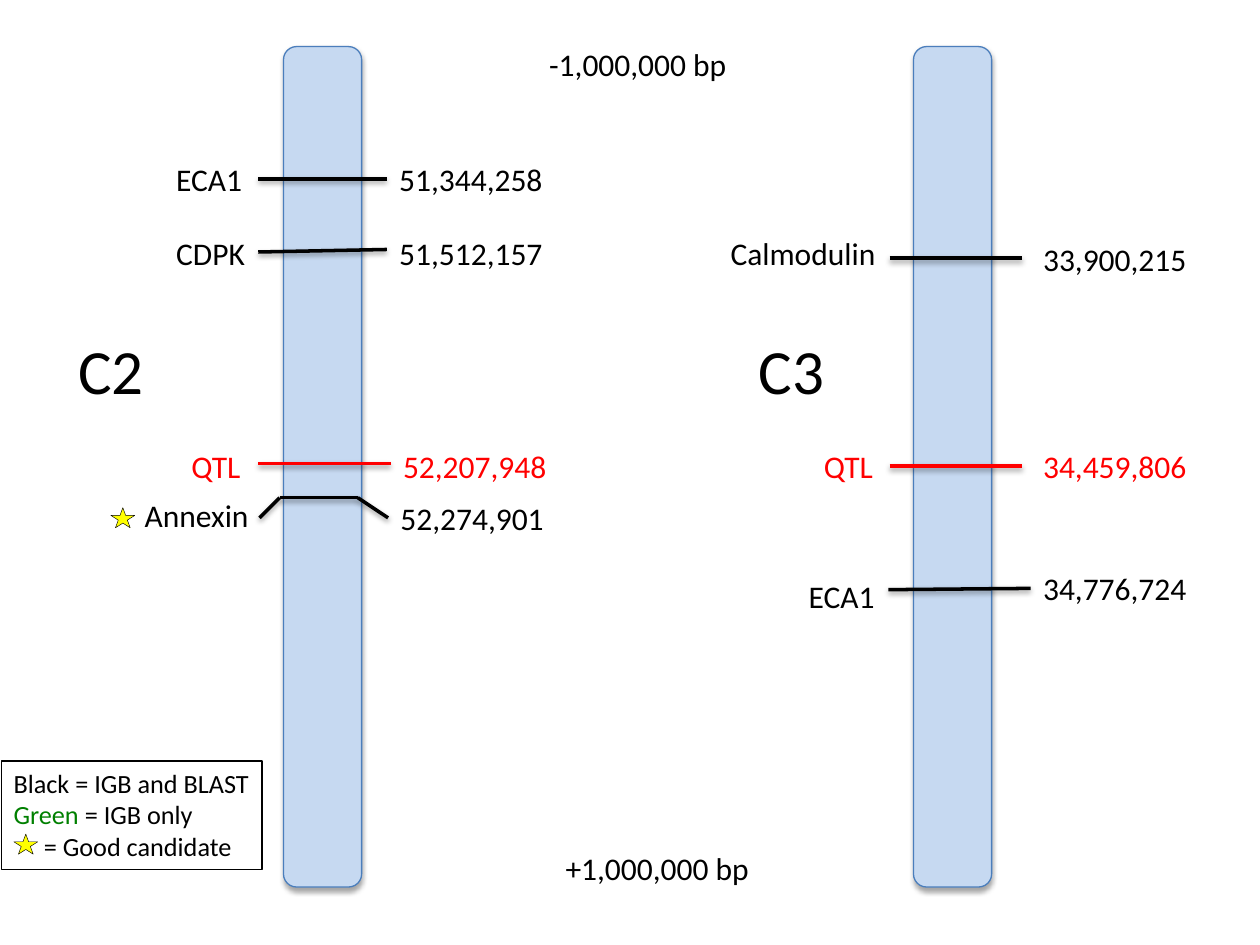
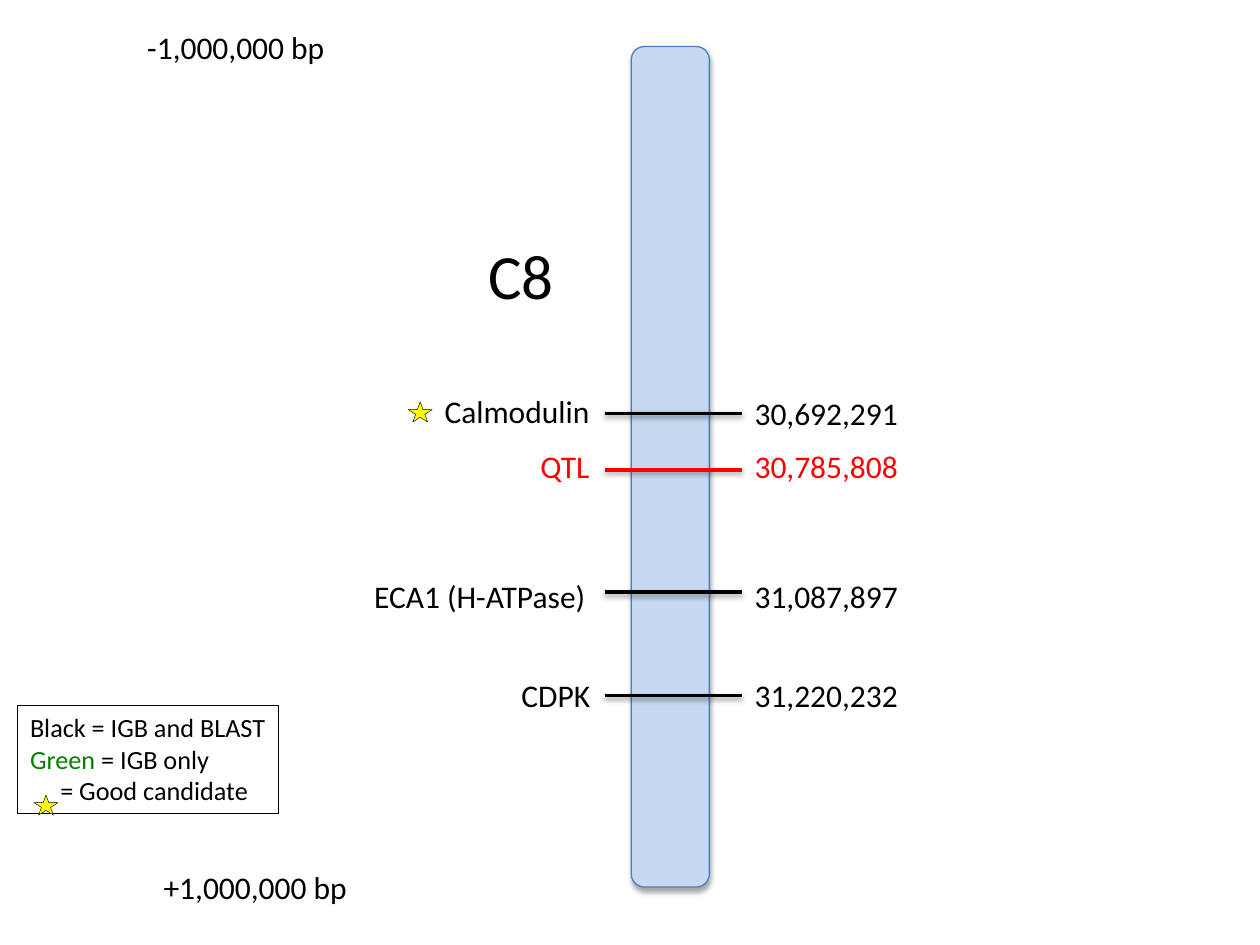
import itertools
from dataclasses import dataclass

import lxml.etree
import pptx
import pptx.dml.color
import pptx.enum.shapes
import pptx.enum.text
import pptx.oxml.ns
import pptx.util

Inches = pptx.util.Inches
Pt = pptx.util.Pt


@dataclass(frozen=True)
class Theme:
    font: str = "Calibri"
    black: str = "000000"
    red: str = "FF0000"
    green: str = "008000"
    yellow: str = "FFFF00"
    bar_fill: str = "C6D9F1"
    bar_line: str = "4B7EBC"
    name_size: int = 36
    label_size: int = 18
    legend_size: int = 15
    tick_width: float = 2
    outline_width: float = 0.75
    star_width: float = 0.25


theme = Theme()

BAR_TOP, BAR_WIDTH, BAR_HEIGHT = 0.37, 0.62, 6.67
LABEL_HEIGHT, NAME_HEIGHT = 0.4, 0.71
POSITION_WIDTH, RANGE_WIDTH = 1.35, 1.67
STAR_SIZE = (0.19, 0.16)
LEGEND_SIZE = (2.07, 0.86)
LEGEND_INDENT = 0.24
GENE_WIDTHS = {"QTL": 0.61, "CDPK": 0.75, "ECA1": 0.73, "Annexin": 1.04,
               "Calmodulin": 1.36, "ECA1 (H-ATPase)": 1.92}
GENE_COLORS = {"QTL": theme.red}
LEGEND = [
    [("Black = IGB and BLAST", theme.black)],
    [("Green", theme.green), (" = IGB only", theme.black)],
    [("= Good candidate", theme.black)],
]

# marker: gene, its left and top, position, its left and top, tick points
SLIDES = [
    {
        "chromosomes": [
            {"name": "C2", "name_box": (0.46, 2.58, 0.84), "bar_left": 2.25, "markers": [
                ("QTL", (1.42, 3.5), "52,207,948", (3.1, 3.5), [(2.05, 3.68), (3.1, 3.68)]),
                ("Annexin", (1.05, 3.89), "52,274,901", (3.08, 3.91),
                 [(2.06, 4.11), (2.22, 3.95), (2.84, 3.95), (3.08, 4.11)]),
                ("CDPK", (1.3, 1.81), "51,512,157", (3.07, 1.81), [(2.05, 2), (3.07, 1.98)]),
                ("ECA1", (1.3, 1.22), "51,344,258", (3.07, 1.22), [(2.05, 1.42), (3.07, 1.42)]),
            ]},
            {"name": "C3", "name_box": (5.81, 2.58, 0.94), "bar_left": 7.25, "markers": [
                ("QTL", (6.44, 3.5), "34,459,806", (8.18, 3.5), [(7.06, 3.7), (8.11, 3.7)]),
                ("Calmodulin", (5.7, 1.81), "33,900,215", (8.18, 1.86), [(7.06, 2.05), (8.11, 2.05)]),
                ("ECA1", (6.32, 4.53), "34,776,724", (8.18, 4.47), [(7.05, 4.68), (8.18, 4.67)]),
            ]},
        ],
        "range": [("-1,000,000 bp", (4.26, 0.31)), ("+1,000,000 bp", (4.39, 6.69))],
        "legend": (0.01, 6.04),
        "stars": [(0.88, 4.03), (0.11, 6.62)],
    },
    {
        "chromosomes": [
            {"name": "C8", "name_box": (3.6, 1.83, 1.07), "bar_left": 5.01, "markers": [
                ("QTL", (4.19, 3.5), "30,785,808", (5.89, 3.5), [(4.8, 3.73), (5.89, 3.73)]),
                ("Calmodulin", (3.43, 3.06), "30,692,291", (5.89, 3.08), [(4.8, 3.28), (5.89, 3.28)]),
                ("ECA1 (H-ATPase)", (2.87, 4.53), "31,087,897", (5.89, 4.53), [(4.8, 4.7), (5.89, 4.7)]),
                ("CDPK", (4.04, 5.32), "31,220,232", (5.89, 5.32), [(4.8, 5.52), (5.89, 5.52)]),
            ]},
        ],
        "range": [("-1,000,000 bp", (1.07, 0.17)), ("+1,000,000 bp", (1.2, 6.84))],
        "legend": (0.14, 5.6),
        "stars": [(3.24, 3.19), (0.27, 6.31)],
    },
]


def rgb(color):
    return pptx.dml.color.RGBColor.from_string(color)


def set_line(shape, color, width):
    shape.line.color.rgb = rgb(color)
    shape.line.width = Pt(width)


def add_shadow(shape, opacity, distance):
    qn = pptx.oxml.ns.qn
    effects = lxml.etree.SubElement(shape._element.spPr, qn("a:effectLst"))
    shadow = lxml.etree.SubElement(effects, qn("a:outerShdw"), {
        "blurRad": str(Pt(3.1)), "dist": str(Pt(distance)),
        "dir": "5400000", "rotWithShape": "0"})
    color = lxml.etree.SubElement(shadow, qn("a:srgbClr"), val=theme.black)
    lxml.etree.SubElement(color, qn("a:alpha"), val=str(opacity * 1000))


def add_text(slide, text, *, at, size, color=theme.black, wrap=False, centered=False):
    box = slide.shapes.add_textbox(*map(Inches, at))
    frame = box.text_frame
    frame.word_wrap = wrap
    frame.auto_size = pptx.enum.text.MSO_AUTO_SIZE.SHAPE_TO_FIT_TEXT
    lines = [[(text, color)]] if isinstance(text, str) else text
    for index, line in enumerate(lines):
        paragraph = frame.add_paragraph() if index else frame.paragraphs[0]
        if centered:
            paragraph.alignment = pptx.enum.text.PP_ALIGN.CENTER
        for words, run_color in line:
            run = paragraph.add_run()
            run.text = words
            run.font.name = theme.font
            run.font.size = Pt(size)
            run.font.color.rgb = rgb(run_color)
    return box


def add_filled(slide, kind, at, fill, line, width):
    shape = slide.shapes.add_shape(kind, *map(Inches, at))
    shape.fill.solid()
    shape.fill.fore_color.rgb = rgb(fill)
    set_line(shape, line, width)
    return shape


def add_tick(slide, points, color):
    for start, end in itertools.pairwise(points):
        tick = slide.shapes.add_connector(
            pptx.enum.shapes.MSO_CONNECTOR.STRAIGHT, *map(Inches, start + end))
        set_line(tick, color, theme.tick_width)
        add_shadow(tick, 38, 1.6)


def add_chromosome(slide, chromosome):
    bar = add_filled(slide, pptx.enum.shapes.MSO_SHAPE.ROUNDED_RECTANGLE,
                     (chromosome["bar_left"], BAR_TOP, BAR_WIDTH, BAR_HEIGHT),
                     theme.bar_fill, theme.bar_line, theme.outline_width)
    add_shadow(bar, 35, 1.8)
    add_text(slide, chromosome["name"], at=(*chromosome["name_box"], NAME_HEIGHT),
             size=theme.name_size, wrap=True, centered=True)
    for gene, gene_corner, position, position_corner, points in chromosome["markers"]:
        color = GENE_COLORS.get(gene, theme.black)
        add_tick(slide, points, color)
        for text, corner, width in ((gene, gene_corner, GENE_WIDTHS[gene]),
                                    (position, position_corner, POSITION_WIDTH)):
            add_text(slide, text, at=(*corner, width, LABEL_HEIGHT),
                     size=theme.label_size, color=color)


def add_legend(slide, corner):
    legend = add_text(slide, LEGEND, at=corner + LEGEND_SIZE, size=theme.legend_size, wrap=True)
    set_line(legend, theme.black, theme.outline_width)
    properties = legend.text_frame.paragraphs[-1]._p.get_or_add_pPr()
    properties.set("marL", str(Inches(LEGEND_INDENT)))


def add_star(slide, corner):
    star = add_filled(slide, pptx.enum.shapes.MSO_SHAPE.STAR_5_POINT, corner + STAR_SIZE,
                      theme.yellow, theme.black, theme.star_width)
    star.shadow.inherit = False


def main():
    presentation = pptx.Presentation()
    presentation.slide_width = Inches(10)
    presentation.slide_height = Inches(7.5)
    for content in SLIDES:
        slide = presentation.slides.add_slide(presentation.slide_layouts[6])
        for chromosome in content["chromosomes"]:
            add_chromosome(slide, chromosome)
        for text, corner in content["range"]:
            add_text(slide, text, at=(*corner, RANGE_WIDTH, LABEL_HEIGHT), size=theme.label_size)
        add_legend(slide, content["legend"])
        for corner in content["stars"]:
            add_star(slide, corner)
    presentation.save("out.pptx")


if __name__ == "__main__":
    main()
